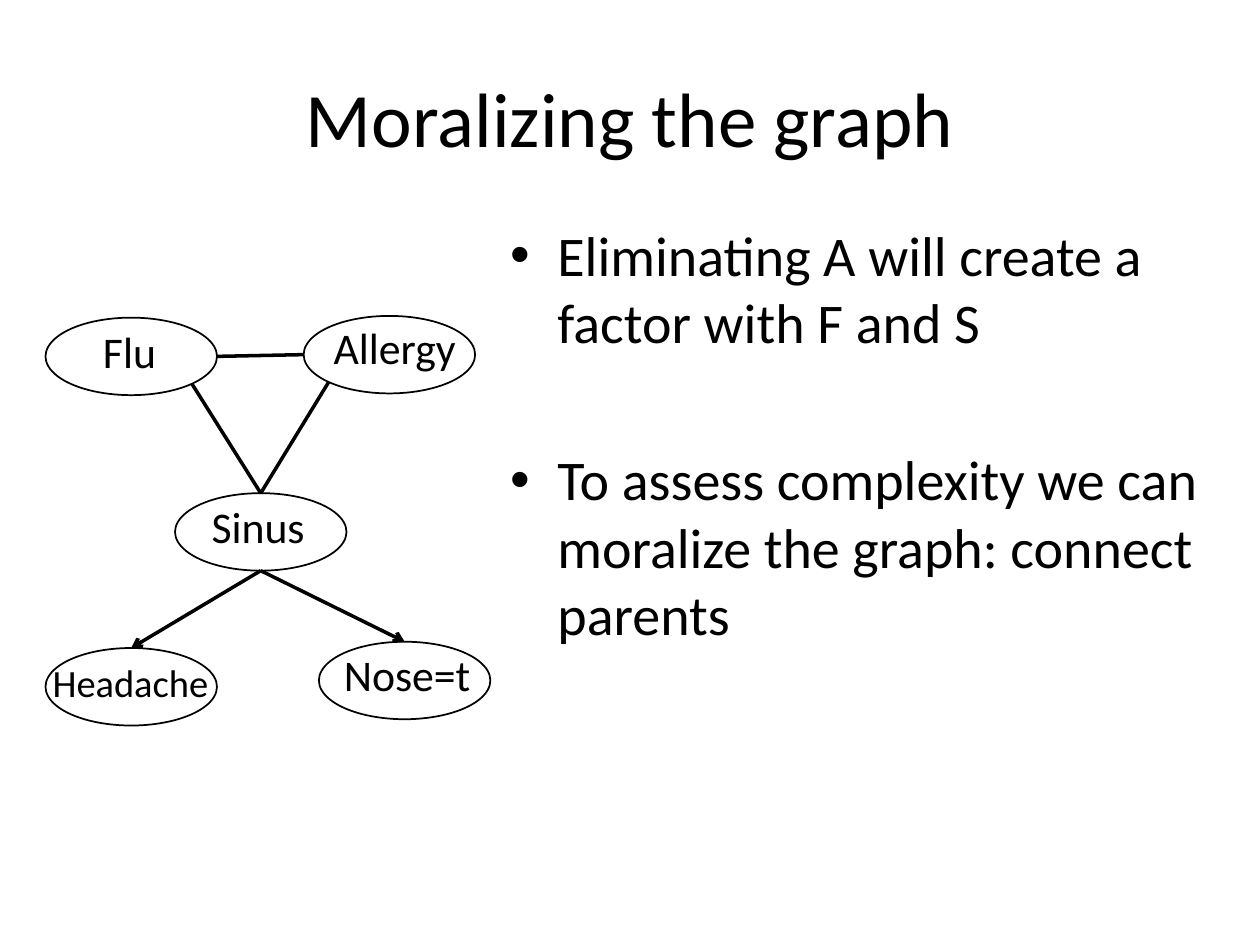
from typing import NamedTuple

from lxml import etree
from pptx import Presentation
from pptx.dml.color import RGBColor
from pptx.enum.shapes import MSO_CONNECTOR, MSO_SHAPE
from pptx.enum.text import MSO_ANCHOR, PP_ALIGN
from pptx.oxml.ns import qn
from pptx.util import Pt

LINE = MSO_CONNECTOR.STRAIGHT
OVAL = MSO_SHAPE.OVAL
MIDDLE, TOP = MSO_ANCHOR.MIDDLE, MSO_ANCHOR.TOP
CENTER, LEFT = PP_ALIGN.CENTER, PP_ALIGN.LEFT
BLACK = RGBColor(0, 0, 0)
FONT = "Calibri"
WIDE, HIGH = 98, 44.3
DIAG = 0.5 ** 0.5
SIDES = {
    "top": (0, -1), "base": (0, 1), "left": (-1, 0), "right": (1, 0),
    "low left": (-DIAG, DIAG), "low right": (DIAG, DIAG),
}


class Box(NamedTuple):
    left: float
    top: float
    width: float
    height: float


class Node(NamedTuple):
    name: str
    left: float
    top: float
    label: Box
    size: float = 25

    def point(self, side: str) -> tuple[float, float]:
        dx, dy = SIDES[side]
        return self.left + WIDE / 2 * (1 + dx), self.top + HIGH / 2 * (1 + dy)


class Edge(NamedTuple):
    start: str
    out: str
    end: str
    into: str
    arrow: bool = False


class Item(NamedTuple):
    text: str
    gap: float


NODES = [
    Node("Flu", 26, 181.5, Box(51.8, 182.2, 62.6, 37.4)),
    Node("Allergy", 173.5, 180.5, Box(183.6, 180, 97.2, 37.4)),
    Node("Sinus", 100, 281.8, Box(113.8, 282.2, 76.3, 37.4)),
    Node("Nose=t", 182.2, 366.7, Box(189.4, 366.5, 92.9, 37.4)),
    Node("Headache", 26, 370.3, Box(23, 373, 121.7, 33.8), 22),
]
EDGES = [
    Edge("Flu", "low right", "Sinus", "top"),
    Edge("Allergy", "low left", "Sinus", "top"),
    Edge("Flu", "right", "Allergy", "left"),
    Edge("Sinus", "base", "Nose=t", "top", True),
    Edge("Sinus", "base", "Headache", "top", True),
]
ITEMS = [
    Item("Eliminating A will create a factor with F and S", 6.4),
    Item("To assess complexity we can moralize the graph: connect parents", 51.5),
]


def style(thing, form: dict) -> None:
    for key, value in form.items():
        setattr(thing, key, value)


def write(para, text: str, size: float, align=LEFT) -> None:
    para.alignment = align
    run = para.add_run()
    run.text = text
    style(run.font, {"name": FONT, "size": Pt(size)})
    run.font.color.rgb = BLACK


def add_box(slide, box: Box, anchor=TOP):
    frame = slide.shapes.add_textbox(*map(Pt, box)).text_frame
    style(frame, {"word_wrap": True, "vertical_anchor": anchor})
    return frame


def draw_node(slide, node: Node) -> None:
    oval = slide.shapes.add_shape(OVAL, *map(Pt, (node.left, node.top, WIDE, HIGH)))
    oval.shadow.inherit = False
    oval.fill.background()
    oval.line.color.rgb = BLACK
    oval.line.width = Pt(1)
    write(add_box(slide, node.label).paragraphs[0], node.name, node.size)


def draw_edge(slide, edge: Edge, nodes: dict[str, Node]) -> None:
    ends = nodes[edge.start].point(edge.out) + nodes[edge.end].point(edge.into)
    link = slide.shapes.add_connector(LINE, *map(Pt, ends))
    link.line.color.rgb = BLACK
    link.line.width = Pt(2)
    props = link._element.spPr
    if edge.arrow:
        etree.SubElement(props.find(qn("a:ln")), qn("a:tailEnd"), type="arrow")
    etree.SubElement(props, qn("a:effectLst"))


def draw_list(slide, box: Box, items: list[Item]) -> None:
    frame = add_box(slide, box)
    for i, item in enumerate(items):
        para = frame.add_paragraph() if i else frame.paragraphs[0]
        write(para, item.text, 32)
        para.space_before = Pt(item.gap)
        props = para._p.get_or_add_pPr()
        props.set("marL", str(Pt(27)))
        props.set("indent", str(Pt(-27)))
        etree.SubElement(props, qn("a:buFont"), typeface="Arial")
        etree.SubElement(props, qn("a:buChar"), char="•")


def main() -> None:
    deck = Presentation()
    style(deck, {"slide_width": Pt(720), "slide_height": Pt(540)})
    slide = deck.slides.add_slide(deck.slide_layouts[6])
    title = add_box(slide, Box(36, 21.6, 648, 90), MIDDLE)
    write(title.paragraphs[0], "Moralizing the graph", 44, CENTER)
    for node in NODES:
        draw_node(slide, node)
    nodes = {node.name: node for node in NODES}
    for edge in EDGES:
        draw_edge(slide, edge, nodes)
    draw_list(slide, Box(284.4, 122.4, 437.8, 356.4), ITEMS)
    deck.save("out.pptx")


if __name__ == "__main__":
    main()
